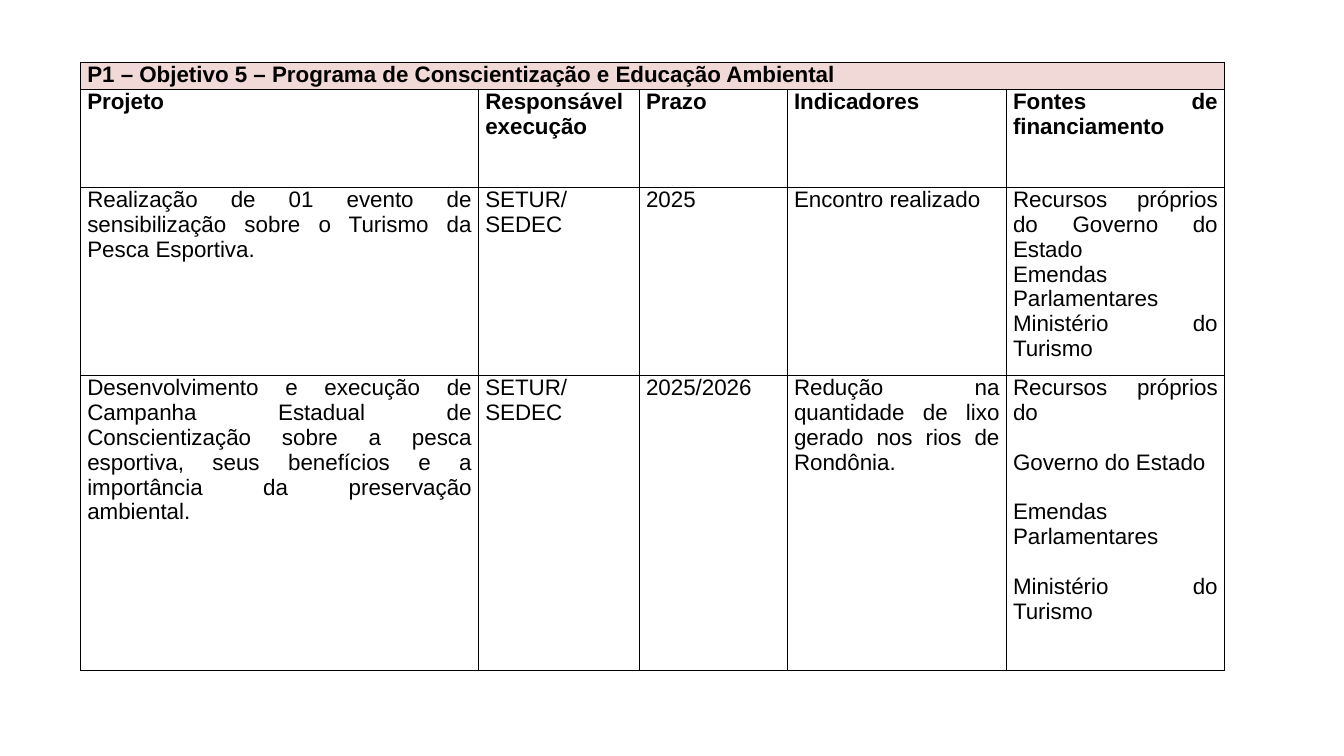
from lxml import etree
from pptx import Presentation
from pptx.dml.color import RGBColor
from pptx.enum.text import MSO_ANCHOR, PP_ALIGN
from pptx.oxml.ns import qn
from pptx.util import Cm, Pt

JUSTIFY = PP_ALIGN.JUSTIFY
TOP = MSO_ANCHOR.TOP

COLORS = {"text": "000000", "border": "000000", "title": "F0D9D7", "body": "FFFFFF"}
FONT = {"name": "Arial", "size": Pt(16)}
CELL = {
    "margin_left": Cm(0.17),
    "margin_right": Cm(0.17),
    "margin_top": 0,
    "margin_bottom": 0,
    "vertical_anchor": TOP,
}
FLAGS = {"first_row": False, "horz_banding": False}
BORDER_SIDES = ("a:lnL", "a:lnR", "a:lnT", "a:lnB")
HEADER_ROWS = 2

COLUMN_WIDTHS = [10.03, 4.05, 3.73, 5.52, 5.5]
ROW_HEIGHTS = [0.69, 2.46, 4.74, 7.43]
FUNDING_GAP = Pt(17.7)
PARAGRAPH_GAPS = {(3, 4): FUNDING_GAP}

PLAN = [
    ["P1 – Objetivo 5 – Programa de Conscientização e Educação Ambiental", "", "", "", ""],
    ["Projeto", "Responsável execução", "Prazo", "Indicadores", "Fontes de financiamento"],
    [
        "Realização de 01 evento de sensibilização sobre o Turismo da Pesca Esportiva.",
        "SETUR/\nSEDEC",
        "2025",
        "Encontro realizado",
        "Recursos próprios do Governo do Estado\nEmendas Parlamentares\nMinistério do Turismo",
    ],
    [
        "Desenvolvimento e execução de Campanha Estadual de Conscientização sobre a pesca "
        "esportiva, seus benefícios e a importância da preservação ambiental.",
        "SETUR/\nSEDEC",
        "2025/2026",
        "Redução na quantidade de lixo gerado nos rios de Rondônia.",
        "Recursos próprios do\nGoverno do Estado\nEmendas Parlamentares\nMinistério do Turismo",
    ],
]


def apply_format(target, values):
    for name, value in values.items():
        setattr(target, name, value)


class PlanSlide:
    def __init__(self, page, colors, font):
        self.page = page
        self.colors = colors
        self.font = font

    def add_borders(self, cell):
        properties = cell._tc.get_or_add_tcPr()
        for side in BORDER_SIDES:
            line = etree.SubElement(properties, qn(side), w=str(Pt(1)))
            fill = etree.SubElement(line, qn("a:solidFill"))
            etree.SubElement(fill, qn("a:srgbClr"), val=self.colors["border"])

    def fill_cell(self, cell, text, color, bold, gap):
        apply_format(cell, CELL)
        self.add_borders(cell)
        cell.fill.solid()
        cell.fill.fore_color.rgb = RGBColor.from_string(self.colors[color])
        cell.text = text
        for index, para in enumerate(cell.text_frame.paragraphs):
            para.alignment = JUSTIFY
            para.space_before = gap if index else 0
            for span in para.runs:
                apply_format(span.font, {**self.font, "bold": bold})
                span.font.color.rgb = RGBColor.from_string(self.colors["text"])

    def add_plan(self, left, top, widths, heights, rows):
        frame = self.page.shapes.add_table(
            len(heights), len(widths), Cm(left), Cm(top), Cm(sum(widths)), Cm(sum(heights))
        )
        table = frame.table
        apply_format(table, FLAGS)
        for column, width in zip(table.columns, widths):
            column.width = Cm(width)
        for row, height in zip(table.rows, heights):
            row.height = Cm(height)
        for row_index, texts in enumerate(rows):
            color = "body" if row_index else "title"
            for column_index, text in enumerate(texts):
                gap = PARAGRAPH_GAPS.get((row_index, column_index), 0)
                cell = table.cell(row_index, column_index)
                self.fill_cell(cell, text, color, row_index < HEADER_ROWS, gap)
        table.cell(0, 0).merge(table.cell(0, len(widths) - 1))


def main():
    deck = Presentation()
    deck.slide_width = Cm(33.87)
    deck.slide_height = Cm(19.05)
    page = deck.slides.add_slide(deck.slide_layouts[6])
    slide = PlanSlide(page, COLORS, FONT)
    slide.add_plan(2.03, 1.57, COLUMN_WIDTHS, ROW_HEIGHTS, PLAN)
    deck.save("out.pptx")


if __name__ == "__main__":
    main()
